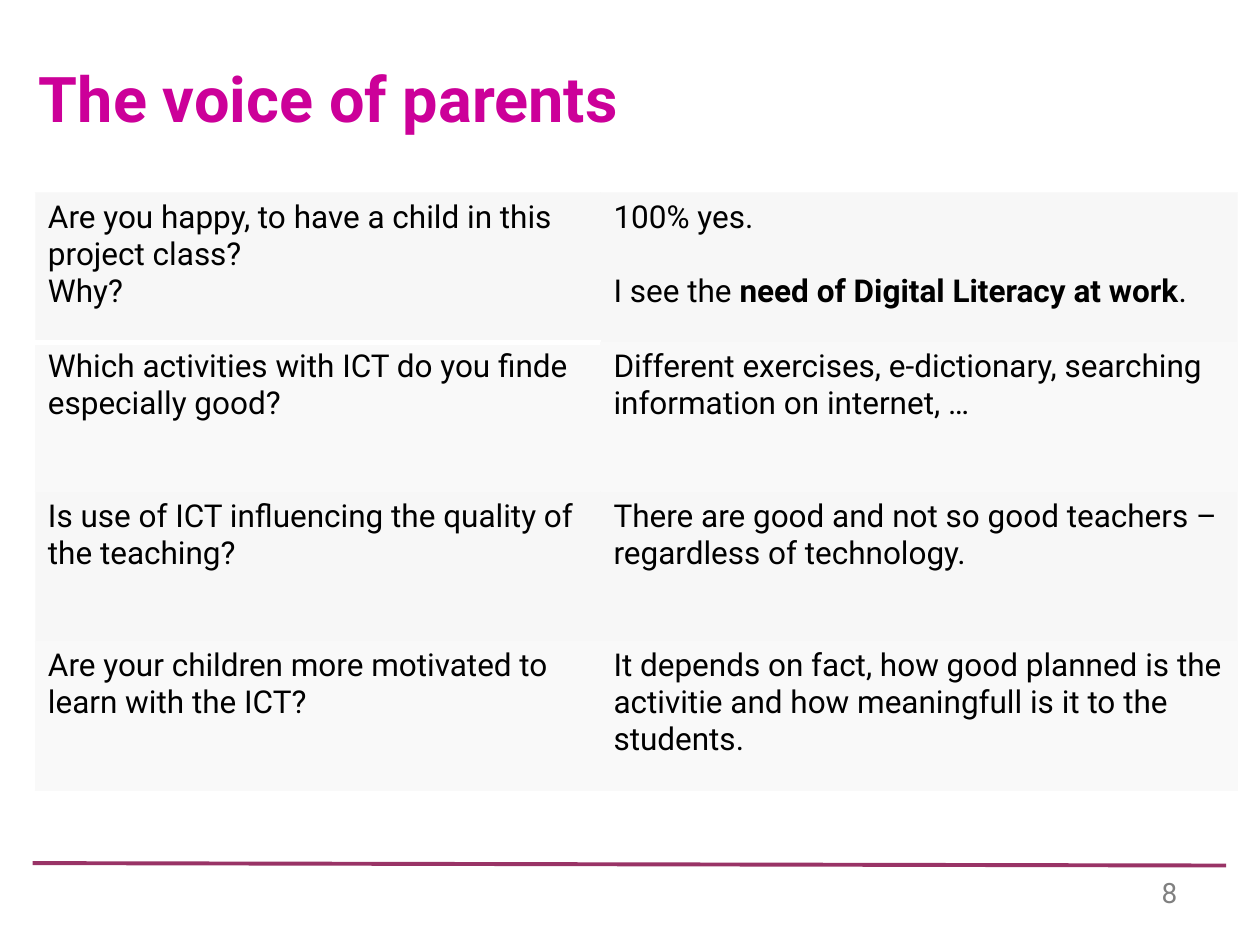
"""Builds the slide on the voice of parents."""
from dataclasses import dataclass

from lxml.etree import SubElement
from pptx import Presentation
from pptx.dml.color import RGBColor
from pptx.enum.shapes import MSO_CONNECTOR as Connector
from pptx.enum.text import MSO_ANCHOR as Anchor
from pptx.oxml import parse_xml
from pptx.oxml.ns import nsdecls, qn
from pptx.util import Pt

FONT = "Roboto"
BLACK, WHITE, EDGE = "000000", "FFFFFF", "F9F9F9"
ROW_FILLS = ("F7F7F7", "F9F9F9")
ROW_HEIGHT = 85.4
COLUMN_WIDTHS = (323.2, 363.6)


@dataclass(frozen=True)
class Phrase:
    text: str
    bold: bool = False


@dataclass(frozen=True)
class Line:
    phrases: tuple[Phrase, ...]
    space_before: float = 0


@dataclass(frozen=True)
class Interview:
    question: tuple[Line, ...]
    answer: tuple[Line, ...]


@dataclass(frozen=True)
class Label:
    line: Line
    left: float
    top: float
    width: float
    height: float
    size: float
    color: str
    inset: float = 0
    anchor: Anchor = Anchor.TOP
    spacing: float = 1.0


def plain(*texts: str) -> tuple[Line, ...]:
    return tuple(Line((Phrase(text),)) for text in texts)


INTERVIEWS = (
    Interview(
        plain("Are you happy, to have a child in this", "project class?", "Why?"),
        plain("100% yes.") + (Line((
            Phrase("I see the "),
            Phrase("need of Digital Literacy at work", bold=True),
            Phrase("."),
        ), space_before=21),),
    ),
    Interview(
        plain("Which activities with ICT do you finde especially good?"),
        plain("Different exercises, e-dictionary, searching information on internet, …"),
    ),
    Interview(
        plain("Is use of ICT influencing the quality of the teaching?"),
        plain("There are good and not so good teachers – regardless of technology."),
    ),
    Interview(
        plain("Are your children more motivated to learn with the ICT?"),
        plain("It depends on fact, how good planned is the activitie and how "
              "meaningfull is it to the students."),
    ),
)

LABELS = (
    Label(Line((Phrase("The voice of parents", bold=True),)), 18.7, 17.3, 580.3, 82,
          36, "CC0099", inset=3.6, anchor=Anchor.MIDDLE, spacing=0.9),
    Label(Line((Phrase("8"),)), 663.8, 500.4, 42.5, 26, 16, "808080"),
)


def rgb(color: str) -> RGBColor:
    return RGBColor.from_string(color)


def write_lines(frame, lines: tuple[Line, ...], size: float, color: str) -> None:
    for index, line in enumerate(lines):
        paragraph = frame.paragraphs[0] if index == 0 else frame.add_paragraph()
        if line.space_before:
            paragraph.space_before = Pt(line.space_before)
        for phrase in line.phrases:
            run = paragraph.add_run()
            run.text = phrase.text
            run.font.name = FONT
            run.font.size = Pt(size)
            run.font.bold = phrase.bold
            run.font.color.rgb = rgb(color)


def draw_label(slide, label: Label) -> None:
    box = slide.shapes.add_textbox(
        Pt(label.left), Pt(label.top), Pt(label.width), Pt(label.height))
    frame = box.text_frame
    frame.word_wrap = True
    frame.vertical_anchor = label.anchor
    frame.margin_left = frame.margin_right = Pt(label.inset)
    frame.margin_top = frame.margin_bottom = Pt(label.inset)
    write_lines(frame, (label.line,), label.size, label.color)
    frame.paragraphs[0].line_spacing = label.spacing


def set_border(cell, position: int, color: str, width: float) -> None:
    side = "LRTB"[position]
    border = parse_xml(
        f'<a:ln{side} {nsdecls("a")} w="{Pt(width)}"><a:solidFill>'
        f'<a:srgbClr val="{color}"/></a:solidFill></a:ln{side}>')
    cell._tc.get_or_add_tcPr().insert(position, border)


def draw_cell(cell, lines: tuple[Line, ...], row: int, column: int) -> None:
    fill = ROW_FILLS[row % 2]
    cell.fill.solid()
    cell.fill.fore_color.rgb = rgb(fill)
    write_lines(cell.text_frame, lines, 18, BLACK)
    divider = (WHITE, 3) if column == 0 else (EDGE, 0.75)
    outer = (EDGE, 0.75)
    borders = (
        outer if column == 0 else (fill, 0.75),
        outer if column == 1 else (fill, 0.75),
        divider if row == 1 else outer,
        divider if row == 0 else outer,
    )
    for position, (color, width) in enumerate(borders):
        set_border(cell, position, color, width)


def draw_interviews(slide) -> None:
    table = slide.shapes.add_table(
        len(INTERVIEWS), len(COLUMN_WIDTHS), Pt(20.2), Pt(110.2),
        Pt(sum(COLUMN_WIDTHS)), Pt(ROW_HEIGHT * len(INTERVIEWS))).table
    table.first_row = False
    table.horz_banding = False
    for column, width in zip(table.columns, COLUMN_WIDTHS):
        column.width = Pt(width)
    for row, interview in enumerate(INTERVIEWS):
        table.rows[row].height = Pt(ROW_HEIGHT)
        for column, lines in enumerate((interview.question, interview.answer)):
            draw_cell(table.cell(row, column), lines, row, column)


def draw_footer_rule(slide) -> None:
    rule = slide.shapes.add_connector(
        Connector.STRAIGHT, Pt(18.7), Pt(493.2), Pt(700.6), Pt(494.6))
    rule.line.color.rgb = rgb("993366")
    rule.line.width = Pt(2.25)
    SubElement(rule._element.spPr, qn("a:effectLst"))


def main() -> None:
    deck = Presentation()
    deck.slide_width, deck.slide_height = Pt(720), Pt(540)
    slide = deck.slides.add_slide(deck.slide_layouts[6])
    draw_footer_rule(slide)
    for label in LABELS:
        draw_label(slide, label)
    draw_interviews(slide)
    deck.save("out.pptx")


if __name__ == "__main__":
    main()
